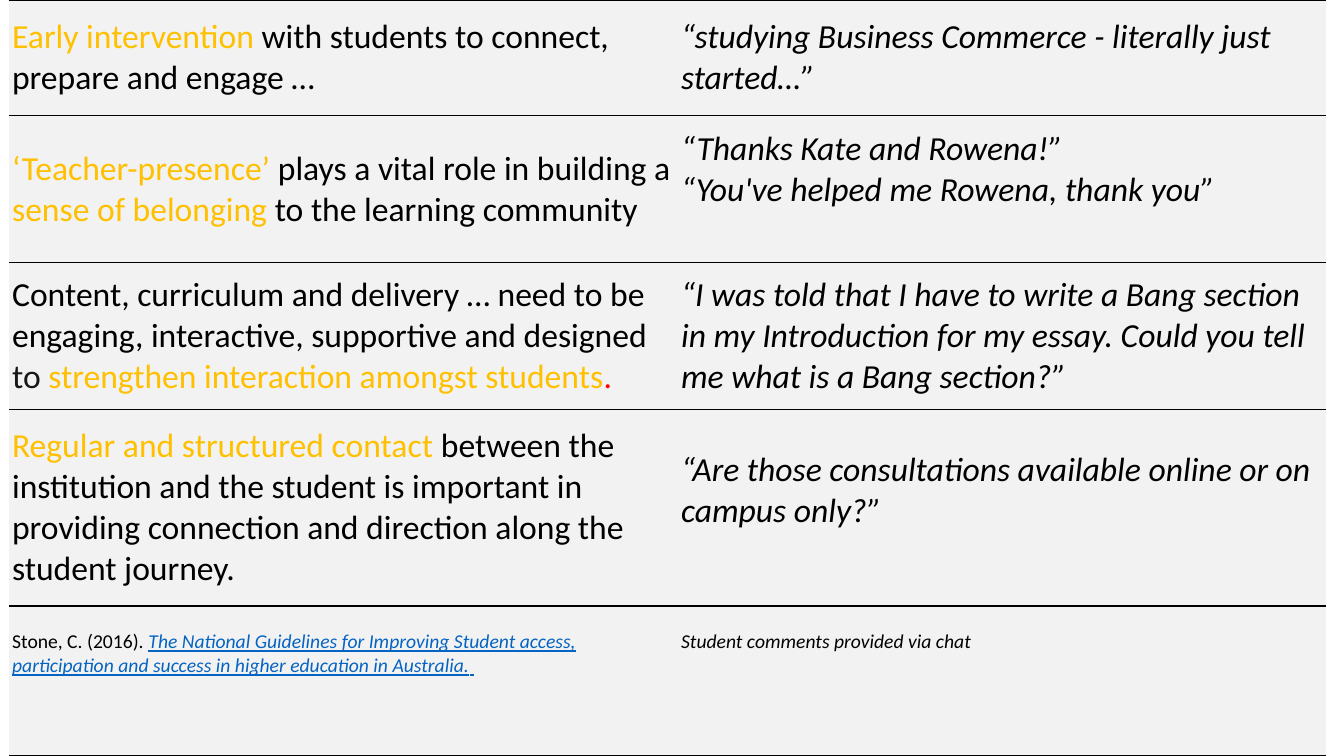
from lxml import etree
from pptx import Presentation
from pptx.dml.color import RGBColor
from pptx.enum.text import MSO_ANCHOR
from pptx.oxml.ns import qn
from pptx.util import Inches, Pt

MIDDLE, TOP = MSO_ANCHOR.MIDDLE, MSO_ANCHOR.TOP
FONT = "Calibri"
BLACK, GOLD, RED, LINK, CHARCOAL = "000000", "FFC000", "FF0000", "0563C1", "181717"
PANEL = "F2F2F2"
PLAIN_STYLE = "{2D5ABB26-0587-4C30-8999-92F81FD0307C}"
COLUMN_WIDTHS = [6.63, 6.42]
ROW_HEIGHTS = [1.15, 1.46, 1.46, 1.95, 1.49]
SIDE_INSET = 0.03
REFERENCE_GAP = 0.24

# Each guideline is a list of (text, colour) runs.
GUIDELINES = [
    [("Early intervention ", GOLD),
     ("with students to connect, prepare and engage …", BLACK)],
    [("‘Teacher-presence’ ", GOLD), ("plays a vital role in building a ", BLACK),
     ("sense of belonging ", GOLD), ("to the learning community", BLACK)],
    [("Content, curriculum and delivery … need to be engaging, interactive, "
      "supportive and designed ", BLACK),
     ("to ", CHARCOAL), ("strengthen interaction amongst students", GOLD), (".", RED)],
    [("Regular and structured contact ", GOLD),
     ("between the institution and the student is important in providing "
      "connection and direction along the student journey.", BLACK)],
]
# Each entry holds the quotes of a row and the inset that lifts them.
COMMENTS = [
    (["“studying Business Commerce - literally just started…”"], 0),
    (["“Thanks Kate and Rowena!”", "“You've helped me Rowena, thank you”"], 0.4),
    (["“I was told that I have to write a Bang section in my Introduction for my "
      "essay. Could you tell me what is a Bang section?”"], 0),
    (["“Are those consultations available online or on campus only?”"], 0.35),
]


def rgb(value):
    return RGBColor.from_string(value)


def add_run(paragraph, text, size, color=BLACK, italic=False, underline=False):
    run = paragraph.add_run()
    run.text = text
    font = run.font
    font.name, font.size = FONT, Pt(size)
    font.italic, font.underline = italic, underline
    font.color.rgb = rgb(color)


def add_rule(cell, side):
    """Draw a thin black border on a cell; side is "T" or "B"."""
    line = etree.SubElement(cell._tc.get_or_add_tcPr(), qn(f"a:ln{side}"), w=str(Pt(1)))
    fill = etree.SubElement(line, qn("a:solidFill"))
    etree.SubElement(fill, qn("a:srgbClr"), val=BLACK)


def style_cell(cell, anchor=MIDDLE, top=0, bottom=0):
    for side in "TB":
        add_rule(cell, side)
    cell.fill.solid()
    cell.fill.fore_color.rgb = rgb(PANEL)
    cell.vertical_anchor = anchor
    cell.margin_left = cell.margin_right = Inches(SIDE_INSET)
    cell.margin_top, cell.margin_bottom = Inches(top), Inches(bottom)


def fill_guideline(cell, runs):
    style_cell(cell)
    for text, color in runs:
        add_run(cell.text_frame.paragraphs[0], text, 24, color)


def fill_comment(cell, quotes, lift):
    style_cell(cell, bottom=lift)
    frame = cell.text_frame
    for index, quote in enumerate(quotes):
        paragraph = frame.add_paragraph() if index else frame.paragraphs[0]
        add_run(paragraph, quote, 24, italic=True)


def fill_references(source_cell, chat_cell):
    for cell in (source_cell, chat_cell):
        style_cell(cell, TOP, top=REFERENCE_GAP)
    source = source_cell.text_frame.paragraphs[0]
    add_run(source, "Stone, C. (2016). ", 14)
    add_run(source, "The National Guidelines for Improving Student access, participation "
            "and success in higher education in Australia.", 14, LINK, True, True)
    add_run(source, " ", 14, LINK, underline=True)
    add_run(chat_cell.text_frame.paragraphs[0],
            "Student comments provided via chat", 14, italic=True)


def add_comparison_table(slide, left, top, width, height):
    table = slide.shapes.add_table(
        len(ROW_HEIGHTS), len(COLUMN_WIDTHS), left, top, width, height).table
    table.first_row = table.horz_banding = False
    table._tbl.tblPr.find(qn("a:tableStyleId")).text = PLAIN_STYLE
    for column, share in zip(table.columns, COLUMN_WIDTHS):
        column.width = int(width * share / sum(COLUMN_WIDTHS))
    for row, share in zip(table.rows, ROW_HEIGHTS):
        row.height = int(height * share / sum(ROW_HEIGHTS))
    for index, (runs, (quotes, lift)) in enumerate(zip(GUIDELINES, COMMENTS)):
        fill_guideline(table.cell(index, 0), runs)
        fill_comment(table.cell(index, 1), quotes, lift)
    last = len(ROW_HEIGHTS) - 1
    fill_references(table.cell(last, 0), table.cell(last, 1))


def main():
    presentation = Presentation()
    presentation.slide_width, presentation.slide_height = Inches(13.33), Inches(7.5)
    slide = presentation.slides.add_slide(presentation.slide_layouts[6])
    add_comparison_table(slide, Inches(0.09), 0, Inches(13.06), presentation.slide_height)
    presentation.save("out.pptx")


if __name__ == "__main__":
    main()
